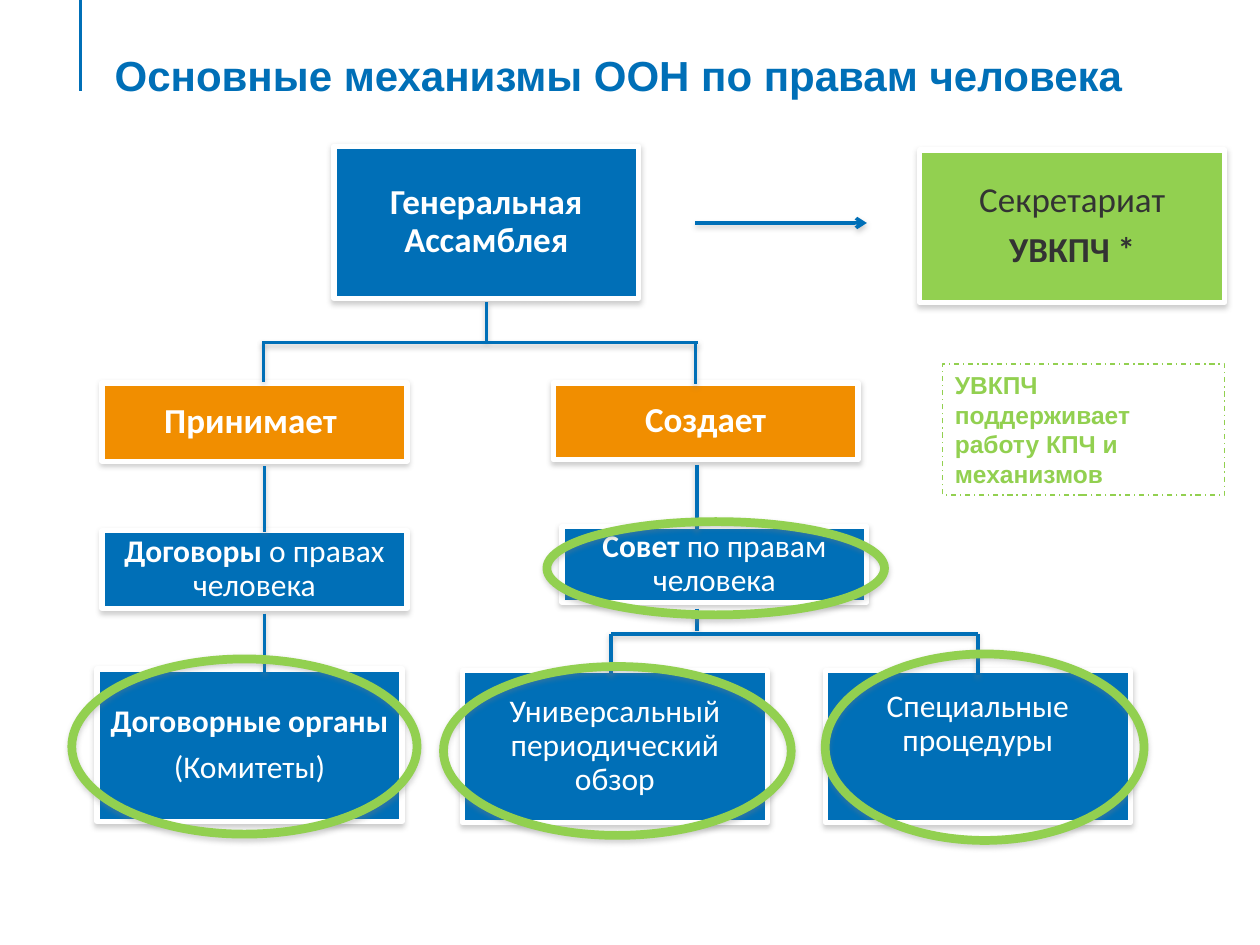
from dataclasses import dataclass

from lxml import etree
from pptx import Presentation
from pptx.dml.color import RGBColor as RGB
from pptx.enum.dml import MSO_LINE
from pptx.enum.shapes import MSO_CONNECTOR, MSO_SHAPE
from pptx.enum.text import MSO_ANCHOR, MSO_AUTO_SIZE, PP_ALIGN
from pptx.oxml import parse_xml
from pptx.oxml.ns import nsdecls, qn
from pptx.util import Inches, Pt


@dataclass(frozen=True)
class Theme:
    blue: RGB = RGB(0x00, 0x6F, 0xB7)
    orange: RGB = RGB(0xF1, 0x8E, 0x00)
    green: RGB = RGB(0x92, 0xD0, 0x50)
    white: RGB = RGB(0xFF, 0xFF, 0xFF)
    dark: RGB = RGB(0x33, 0x33, 0x33)
    head_font: str = "Arial"
    body_font: str = "Calibri"
    title: int = 24
    large: int = 20
    body: int = 18
    note: int = 14


T = Theme()
BOX_W, TALL = 2.42, 1.21

# left, top, height, fill, text colour, size, paragraphs of (text, bold) runs
BOXES = [
    (7.3, 1.19, TALL, T.green, T.dark, T.large,
     [[("Cекретариат", False)], [("УВКПЧ *", True)]]),
    (2.65, 1.16, TALL, T.blue, T.white, T.large, [[("Генеральная Ассамблея", True)]]),
    (0.81, 3.04, 0.62, T.orange, T.white, T.large, [[("Принимает ", True)]]),
    (4.39, 3.04, 0.61, T.orange, T.white, T.large, [[("Создает", True)]]),
    (0.81, 4.21, 0.62, T.blue, T.white, T.body,
     [[("Договоры ", True), ("о правах человека", False)]]),
    (4.46, 4.18, 0.6, T.blue, T.white, T.body,
     [[("Совет ", True), ("по правам человека", False)]]),
    (0.77, 5.31, TALL, T.blue, T.white, T.body,
     [[("Договорные органы", True)], [("(Комитеты)", False)]]),
    (3.67, 5.32, TALL, T.blue, T.white, T.body,
     [[("Универсальный периодический обзор", False)]]),
]

# x1, y1, x2, y2
LINES = [
    (3.86, 2.4, 3.86, 2.71), (2.08, 2.72, 5.54, 2.72),
    (2.09, 2.71, 2.09, 3.03), (5.52, 2.73, 5.52, 3.05),
    (2.1, 3.7, 2.1, 4.22), (5.53, 3.69, 5.53, 4.2),
    (2.1, 4.87, 2.1, 5.34), (5.53, 4.83, 5.53, 5.01),
    (4.85, 5.03, 7.76, 5.03), (4.85, 5.03, 4.85, 5.35), (7.76, 5.03, 7.76, 5.36),
]

# left, top, width, height
RINGS = [
    (3.52, 5.29, 2.76, 1.34), (0.57, 5.23, 2.74, 1.39),
    (6.55, 5.19, 2.53, 1.48), (4.34, 4.14, 2.68, 0.74),
]


def set_shadow(shape, alpha=38):
    """Replace the theme effect by a soft grey drop shadow; alpha 0 means none."""
    sp_pr = shape._element.spPr
    for old in sp_pr.findall(qn("a:effectLst")):
        sp_pr.remove(old)
    effects = etree.SubElement(sp_pr, qn("a:effectLst"))
    if alpha:
        effects.append(parse_xml(
            f'<a:outerShdw {nsdecls("a")} blurRad="{Pt(3.1)}" dist="{Pt(1.6)}" '
            f'dir="5400000" rotWithShape="0"><a:srgbClr val="808080">'
            f'<a:alpha val="{alpha * 1000}"/></a:srgbClr></a:outerShdw>'))


def set_font(font, name, size, color, bold=None):
    font.name, font.size, font.bold = name, Pt(size), bold
    font.color.rgb = color


def add_outline(s, kind, x, y, w, h, color, width):
    sp = s.shapes.add_shape(kind, Inches(x), Inches(y), Inches(w), Inches(h))
    sp.fill.background()
    sp.line.color.rgb = color
    sp.line.width = Pt(width)
    return sp


def add_box(s, x, y, h, fill, color, size, paragraphs, bottom=0.05):
    sp = add_outline(s, MSO_SHAPE.RECTANGLE, x, y, BOX_W, h, T.white, 3)
    sp.fill.solid()
    sp.fill.fore_color.rgb = fill
    set_shadow(sp)
    tf = sp.text_frame
    tf.word_wrap = True
    tf.vertical_anchor = MSO_ANCHOR.MIDDLE
    tf.margin_left = tf.margin_right = tf.margin_top = Inches(0.05)
    tf.margin_bottom = Inches(bottom)
    for i, runs in enumerate(paragraphs):
        p = tf.add_paragraph() if i else tf.paragraphs[0]
        p.alignment = PP_ALIGN.CENTER
        p.line_spacing = 0.9
        p.space_after = Pt(0.35 * size)
        set_font(p.font, T.body_font, size, color)
        for text, bold in runs:
            r = p.add_run()
            r.text, r.font.bold = text, bold


def add_line(s, x1, y1, x2, y2, arrow=False, alpha=38):
    line = s.shapes.add_connector(MSO_CONNECTOR.STRAIGHT, Inches(x1), Inches(y1),
                                  Inches(x2), Inches(y2))
    line.line.color.rgb = T.blue
    line.line.width = Pt(2)
    if arrow:
        etree.SubElement(line.line._get_or_add_ln(), qn("a:tailEnd"), type="arrow")
    set_shadow(line, alpha)


def add_ring(s, x, y, w, h):
    sp = add_outline(s, MSO_SHAPE.OVAL, x, y, w, h, T.green, 5)
    set_shadow(sp, 35)


def add_note(s, x, y, w, h, text):
    sp = add_outline(s, MSO_SHAPE.RECTANGLE, x, y, w, h, T.green, 0.75)
    sp.line.dash_style = MSO_LINE.DASH_DOT
    sp.shadow.inherit = False
    tf = sp.text_frame
    tf.word_wrap = True
    tf.vertical_anchor = MSO_ANCHOR.TOP
    p = tf.paragraphs[0]
    p.text, p.alignment = text, PP_ALIGN.LEFT
    set_font(p.font, T.head_font, T.note, T.green, True)


def set_title(s, text):
    sp = s.shapes.title
    sp.left, sp.top, sp.width, sp.height = map(Inches, (0.81, 0.3, 8.27, 0.78))
    tf = sp.text_frame
    tf.auto_size = MSO_AUTO_SIZE.NONE
    tf.vertical_anchor = MSO_ANCHOR.TOP
    tf.margin_top = Inches(0.09)
    p = tf.paragraphs[0]
    p.text, p.alignment = text, PP_ALIGN.LEFT
    set_font(p.font, T.head_font, T.title, T.blue, True)


def main():
    prs = Presentation()
    prs.slide_width, prs.slide_height = Inches(10), Inches(7.5)
    s = prs.slides.add_slide(prs.slide_layouts[5])

    # Heading with its accent rule
    add_line(s, 0.64, 0, 0.64, 0.72, alpha=0)
    set_title(s, "Основные механизмы ООН по правам человека")

    # Organisation chart
    for box in BOXES:
        add_box(s, *box)
    # The deeper bottom margin lifts this text above the middle
    add_box(s, 6.55, 5.32, TALL, T.blue, T.white, T.body,
            [[("Специальные процедуры", False)]], bottom=0.41)
    for line in LINES:
        add_line(s, *line)
    add_line(s, 5.52, 1.77, 6.88, 1.77, arrow=True)

    # Highlights and side note
    for ring in RINGS:
        add_ring(s, *ring)
    add_note(s, 7.48, 2.89, 2.24, 1.04, "УВКПЧ поддерживает работу КПЧ и механизмов")

    prs.save("out.pptx")


if __name__ == "__main__":
    main()
